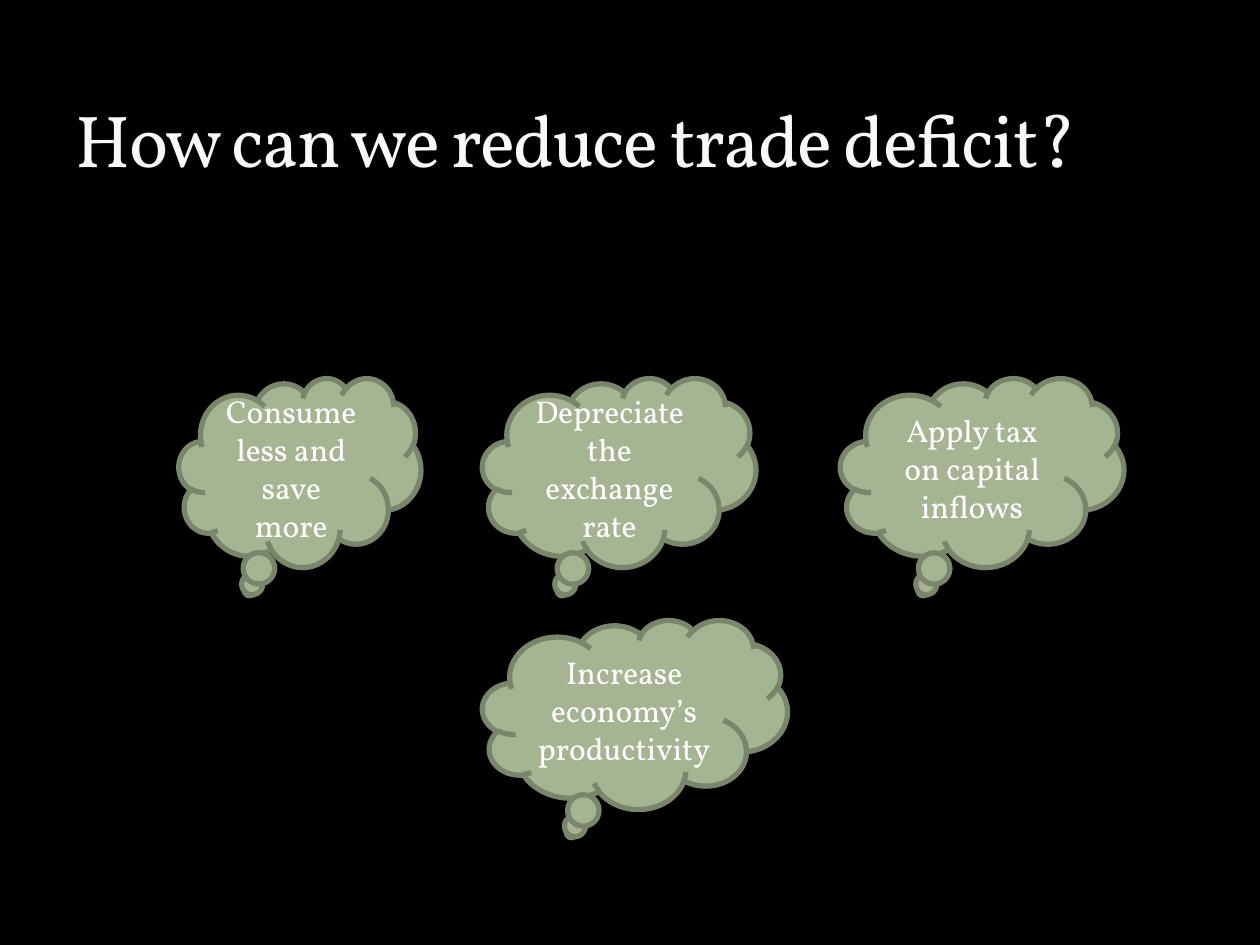
from pptx import Presentation
from pptx import util as u
from pptx.dml.color import RGBColor
from pptx.enum import shapes, text

FONT = "Vollkorn"
COLORS = {"background": "000000", "title": "F9F9F9", "cloud": "A5B592",
          "outline": "7A866C", "label": "FFFFFF"}
TOP_ROW, BOTTOM_ROW, CLOUD_HEIGHT = 3, 4.92, 1.5
# Label, left, top, width
CLOUDS = [
    ("Consume less and save more", 1.42, TOP_ROW, 1.92),
    ("Apply tax on capital inflows", 6.67, TOP_ROW, 2.25),
    ("Depreciate the exchange rate", 3.83, TOP_ROW, 2.17),
    ("Increase economy’s productivity", 3.83, BOTTOM_ROW, 2.42),
]


def color(name):
    return RGBColor.from_string(COLORS[name])


def write(frame, words, size, color_name, align, anchor):
    frame.word_wrap = True
    frame.auto_size = text.MSO_AUTO_SIZE.NONE
    frame.vertical_anchor = anchor
    para = frame.paragraphs[0]
    para.text = words
    para.alignment = align
    para.font.name = FONT
    para.font.size = u.Pt(size)
    para.font.color.rgb = color(color_name)
    return para


def add_title(page, box, words):
    title = page.shapes.title
    title.left, title.top, title.width, title.height = map(u.Inches, box)
    para = write(title.text_frame, words, 42, "title",
                 text.PP_ALIGN.LEFT, text.MSO_ANCHOR.BOTTOM)
    # Tighten letter spacing by one point
    para.runs[0].font._element.set("spc", "-100")


def add_cloud(page, box, words):
    cloud = page.shapes.add_shape(shapes.MSO_SHAPE.CLOUD_CALLOUT,
                                  *map(u.Inches, box))
    cloud.shadow.inherit = False
    cloud.fill.solid()
    cloud.fill.fore_color.rgb = color("cloud")
    cloud.line.color.rgb = color("outline")
    cloud.line.width = u.Pt(3)
    write(cloud.text_frame, words, 18, "label",
          text.PP_ALIGN.CENTER, text.MSO_ANCHOR.MIDDLE)


def main():
    deck = Presentation()
    deck.slide_width, deck.slide_height = u.Inches(10), u.Inches(7.5)
    page = deck.slides.add_slide(deck.slide_layouts[5])
    page.background.fill.solid()
    page.background.fill.fore_color.rgb = color("background")

    # Title
    add_title(page, (0.5, 0.17, 9, 1.33), "How can we reduce trade deficit?")

    # Thought clouds
    for words, left, top, width in CLOUDS:
        add_cloud(page, (left, top, width, CLOUD_HEIGHT), words)

    deck.save("out.pptx")


if __name__ == "__main__":
    main()
